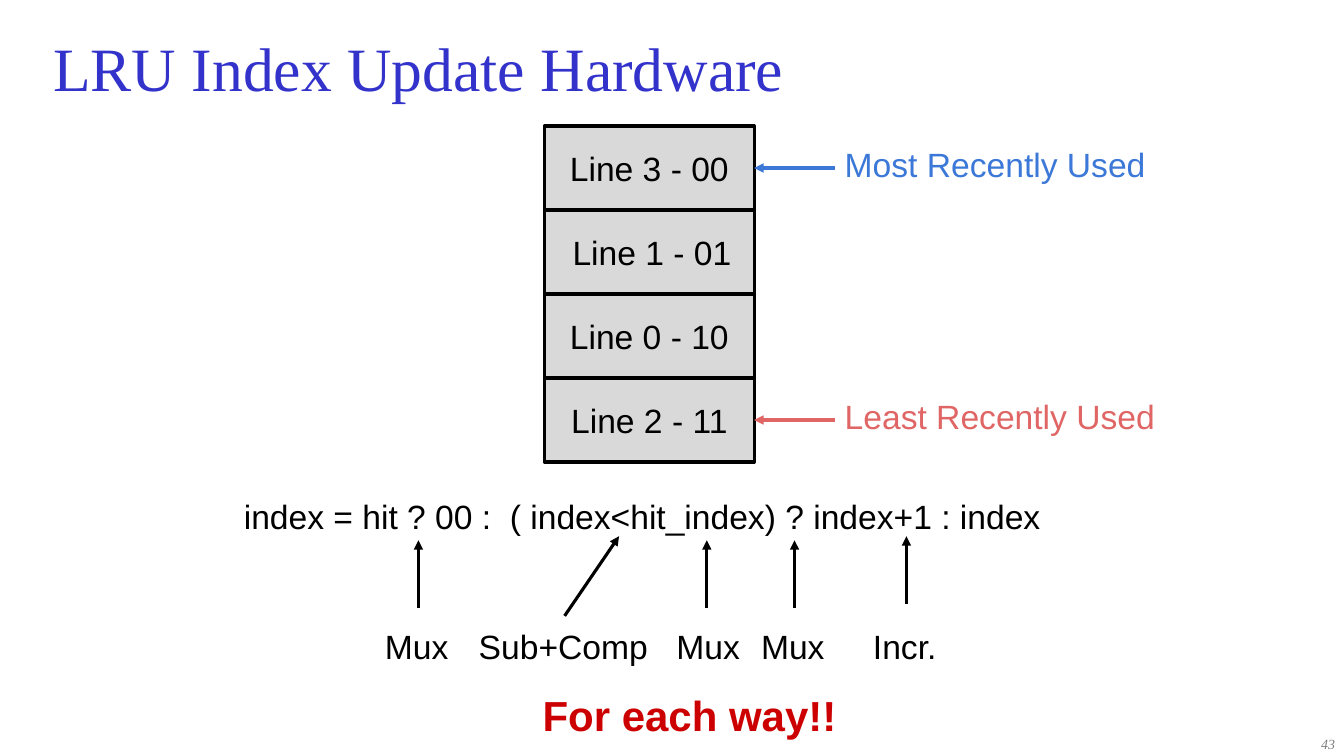
"""Builds the slide on the hardware that updates LRU indices."""
from pptx import Presentation
from pptx.dml.color import RGBColor
from pptx.enum import shapes, text
from pptx.oxml import ns
from pptx.util import Inches, Pt
from lxml import etree

BLACK = RGBColor(0x00, 0x00, 0x00)
INDIGO = RGBColor(0x33, 0x33, 0xCC)
BLUE = RGBColor(0x3C, 0x78, 0xD8)
CORAL = RGBColor(0xE0, 0x66, 0x66)
RED = RGBColor(0xCC, 0x00, 0x00)
LIGHT_GRAY = RGBColor(0xD9, 0xD9, 0xD9)
MID_GRAY = RGBColor(0x7F, 0x7F, 0x7F)

SERIF = "Times New Roman"
LEFT, CENTER, RIGHT = text.PP_ALIGN.LEFT, text.PP_ALIGN.CENTER, text.PP_ALIGN.RIGHT
TOP, MIDDLE = text.MSO_ANCHOR.TOP, text.MSO_ANCHOR.MIDDLE
LINE_WIDTH = Pt(2.25)
LABEL_HEIGHT = 0.68


def write(box, words, size=24, color=BLACK, font="Arial", bold=False, italic=False,
          align=LEFT, anchor=TOP, inset=0.1, left_inset=0.1):
    """Put formatted words into a box."""
    frame = box.text_frame
    frame.word_wrap = True
    frame.vertical_anchor = anchor
    frame.margin_left, frame.margin_right = Inches(left_inset), Inches(0.1)
    frame.margin_top = frame.margin_bottom = Inches(inset)
    para = frame.paragraphs[0]
    para.alignment = align
    span = para.add_run()
    span.text = words
    span.font.name, span.font.size = font, Pt(size)
    span.font.bold, span.font.italic = bold, italic
    span.font.color.rgb = color


def add_label(page, words, left, top, width, height=LABEL_HEIGHT, **style):
    """Add a text box and return it."""
    box = page.shapes.add_textbox(Inches(left), Inches(top), Inches(width), Inches(height))
    write(box, words, **style)
    return box


def add_cache_line(page, words, top, height, left_inset):
    """Add one gray cell of the recency stack and return it."""
    cell = page.shapes.add_shape(shapes.MSO_SHAPE.RECTANGLE, Inches(5.4), Inches(top),
                                 Inches(2.08), Inches(height))
    cell.shadow.inherit = False
    cell.fill.solid()
    cell.fill.fore_color.rgb = LIGHT_GRAY
    cell.line.color.rgb = BLACK
    cell.line.width = LINE_WIDTH
    write(cell, words, align=CENTER, anchor=MIDDLE, left_inset=left_inset)
    return cell


def add_arrow(page, start, end, color=BLACK):
    """Add a straight arrow from start to end and return it."""
    arrow = page.shapes.add_connector(shapes.MSO_CONNECTOR.STRAIGHT,
                                      *map(Inches, start + end))
    arrow.line.color.rgb = color
    arrow.line.width = LINE_WIDTH
    etree.SubElement(arrow.line._get_or_add_ln(), ns.qn("a:tailEnd"), type="triangle")
    etree.SubElement(arrow._element.spPr, ns.qn("a:effectLst"))
    return arrow


def add_recency_stack(page):
    """Add the four cache lines and mark the most and least recently used."""
    top, height = 1.25, 5 / 6
    lines = [("Line 3 - 00", 0.1), ("Line 1 - 01", 0.15),
             ("Line 0 - 10", 0.1), ("Line 2 - 11", 0.1)]
    cells = [add_cache_line(page, words, top + row * height, height, left_inset)
             for row, (words, left_inset) in enumerate(lines)]
    marks = [(0, "Most Recently Used", BLUE), (3, "Least Recently Used", CORAL)]
    for row, words, color in marks:
        middle = top + (row + 0.5) * height
        label = add_label(page, words, 8.28, middle - LABEL_HEIGHT / 2, 3.86, color=color)
        arrow = add_arrow(page, (8.28, middle), (7.48, middle), color)
        arrow.begin_connect(label, 1)
        arrow.end_connect(cells[row], 3)


def add_update_rule(page):
    """Add the index expression and the hardware that each part needs."""
    add_label(page, "index = hit ? 00 :  ( index<hit_index) ? index+1 : index", 2.32, 4.82, 8.97)
    part_top = 6.11
    parts = [("Mux", 3.72, 4.15, 5.36), ("Mux", 6.61, 7.01, 5.36),
             ("Mux", 7.45, 7.88, 5.36), ("Incr.", 8.56, 8.99, 5.32)]
    for words, left, arrow_x, tip in parts:
        add_label(page, words, left, part_top, 0.87)
        add_arrow(page, (arrow_x, tip + 0.67), (arrow_x, tip))
    comparer = add_label(page, "Sub+Comp", 4.65, part_top, 1.9)
    add_arrow(page, (5.6, part_top), (6.14, 5.32)).begin_connect(comparer, 0)


def main():
    """Build and save the deck."""
    deck = Presentation()
    deck.slide_width, deck.slide_height = Inches(13.33), Inches(7.5)
    page = deck.slides.add_slide(deck.slide_layouts[6])
    add_label(page, "LRU Index Update Hardware", 0.43, 0.25, 12.65, 0.83, size=44,
              color=INDIGO, font=SERIF, anchor=MIDDLE, inset=0.05)
    add_recency_stack(page)
    add_update_rule(page)
    add_label(page, "For each way!!", 3.09, 6.74, 7.5, size=30, color=RED, bold=True,
              align=CENTER)
    add_label(page, "43", 10.56, 7.25, 2.78, 0.25, size=10, color=MID_GRAY, font=SERIF,
              italic=True, align=RIGHT, inset=0.05)
    deck.save("out.pptx")


if __name__ == "__main__":
    main()
